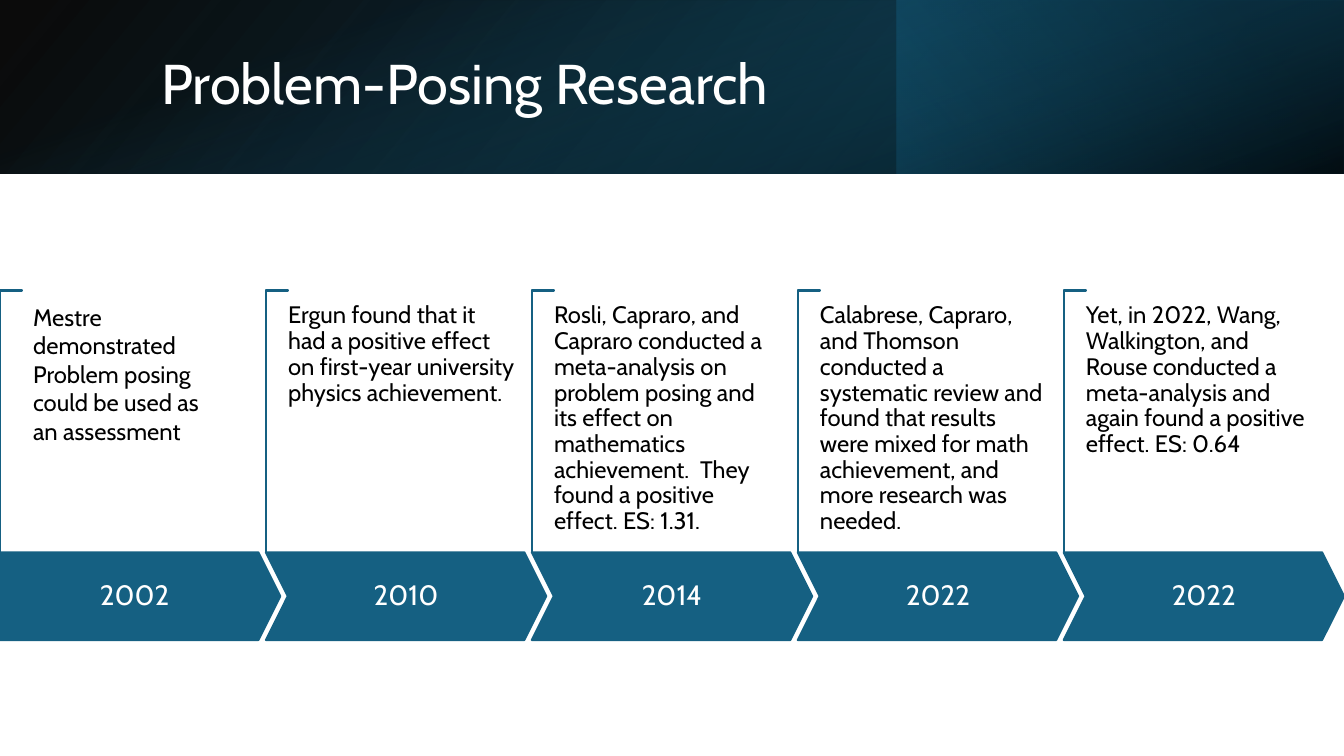
"""Build the Problem-Posing Research timeline slide."""
from lxml import etree
from pptx import Presentation
from pptx.dml.color import RGBColor
from pptx.enum.shapes import MSO_SHAPE as SHAPE
from pptx.enum.text import MSO_ANCHOR as ANCHOR, PP_ALIGN as ALIGN
from pptx.oxml.ns import qn
from pptx.util import Inches, Pt

BLUE = RGBColor(0x15, 0x60, 0x82)
MID_BLUE = RGBColor(0x10, 0x48, 0x62)
DARK_BLUE = RGBColor(0x0B, 0x30, 0x41)
BLACK = RGBColor(0, 0, 0)
WHITE = RGBColor(255, 255, 255)

TITLE = "Problem-Posing Research"
STUDIES = [
    ("2002", ["Mestre demonstrated", "Problem posing could be used as an assessment"]),
    ("2010", ["Ergun found that it had a positive effect on first-year university "
              "physics achievement."]),
    ("2014", ["Rosli, Capraro, and Capraro conducted a meta-analysis on problem posing "
              "and its effect on mathematics achievement.  They found a positive "
              "effect. ES: 1.31."]),
    ("2022", ["Calabrese, Capraro, and Thomson conducted a systematic review and found "
              "that results were mixed for math achievement, and more research was "
              "needed."]),
    ("2022", ["Yet, in 2022, Wang, Walkington, and Rouse conducted a meta-analysis and "
              "again found a positive effect. ES: 0.64"]),
]
BANDS = [
    dict(box=(0, 0, 13.33, 1.72), flip=True, angle=140,
         stops=[(0, BLACK, 96), (100, MID_BLUE, 100)]),
    dict(box=(8.89, 0, 4.44, 1.72), rotation=180, angle=320,
         stops=[(19, DARK_BLUE, 68), (100, BLUE, 79)]),
    dict(box=(5.8, -5.8, 1.72, 13.33), rotation=90, angle=340,
         stops=[(23, BLUE, 0), (99, BLACK, 74)]),
]
SLIDE_W, SLIDE_H = 13.33, 7.5
ARROW_W, ARROW_H, ARROW_TOP = 2.78, 0.87, 5.48
STEP = (SLIDE_W - ARROW_W) / (len(STUDIES) - 1)
BRACKET_W, BRACKET_H = 0.22, 2.6


def inches(box):
    """Convert a box in inches to lengths."""
    return [Inches(v) for v in box]


def write(tf, paragraphs, size=17, color=BLACK, align=ALIGN.LEFT, anchor=ANCHOR.TOP,
          spacing=0.9, after=0, insets=(0.1, 0.05)):
    """Fill a text frame with formatted paragraphs."""
    tf.word_wrap = True
    tf.vertical_anchor = anchor
    tf.margin_left = tf.margin_right = Inches(insets[0])
    tf.margin_top = tf.margin_bottom = Inches(insets[1])
    for i, text in enumerate(paragraphs):
        p = tf.add_paragraph() if i else tf.paragraphs[0]
        p.alignment, p.line_spacing, p.space_after = align, spacing, Pt(after)
        r = p.add_run()
        r.text = text
        r.font.name, r.font.size, r.font.color.rgb = "Cabin", Pt(size), color


def add_band(shapes, box, angle, stops, rotation=0, flip=False):
    """Add a borderless rectangle with a translucent gradient."""
    sp = shapes.add_shape(SHAPE.RECTANGLE, *inches(box))
    sp.shadow.inherit = False
    sp.rotation = rotation
    sp.line.fill.background()
    sp.fill.gradient()
    sp.fill.gradient_angle = 360 - angle
    for stop, (position, color, _) in zip(sp.fill.gradient_stops, stops):
        stop.position = position / 100
        stop.color.rgb = color
    colors = sp._element.spPr.iter(qn("a:srgbClr"))
    for clr, (_, _, opacity) in zip(list(colors), stops):
        etree.SubElement(clr, qn("a:alpha"), val=str(opacity * 1000))
    if flip:
        sp._element.spPr.find(qn("a:xfrm")).set("flipH", "1")


def add_outlined(shapes, kind, box, fill, adjustments, rotation=0):
    """Add a filled shape with a blue outline."""
    sp = shapes.add_shape(kind, *inches(box))
    sp.shadow.inherit = False
    sp.rotation = rotation
    for i, value in enumerate(adjustments):
        sp.adjustments[i] = value
    sp.fill.solid()
    sp.fill.fore_color.rgb = fill
    sp.line.color.rgb = BLUE
    sp.line.width = Pt(1.5)


def add_text(shapes, box, paragraphs, **fmt):
    """Add a text box."""
    write(shapes.add_textbox(*inches(box)).text_frame, paragraphs, **fmt)


def main():
    """Assemble and save the slide."""
    prs = Presentation()
    prs.slide_width, prs.slide_height = Inches(SLIDE_W), Inches(SLIDE_H)
    s = prs.slides.add_slide(prs.slide_layouts[5])
    for band in BANDS:
        add_band(s.shapes, **band)

    title = s.shapes.title
    title.left, title.top, title.width, title.height = inches((1.5, 0.38, 10.98, 0.96))
    write(title.text_frame, [TITLE], size=40, color=WHITE, anchor=ANCHOR.MIDDLE)
    s.shapes._spTree.append(title._element)

    timeline = s.shapes.add_group_shape().shapes
    for i, (year, finding) in enumerate(STUDIES):
        x = i * STEP
        first = i == 0
        bracket = (x + (BRACKET_W - BRACKET_H) / 2,
                   ARROW_TOP - (BRACKET_H + BRACKET_W) / 2, BRACKET_H, BRACKET_W)
        add_outlined(timeline, SHAPE.CORNER, bracket, WHITE, (0.01, 0.01), rotation=90)
        add_outlined(timeline, SHAPE.PENTAGON if first else SHAPE.CHEVRON,
                     (x, ARROW_TOP, ARROW_W, ARROW_H), BLUE, (0.25,))
        left, width = (0, 2.67) if first else (x + 0.22, 2.34)
        add_text(timeline, (left, ARROW_TOP, width, ARROW_H), [year], size=20,
                 color=WHITE, align=ALIGN.CENTER, anchor=ANCHOR.MIDDLE, after=7,
                 insets=(0.14, 0.28))
        if first:
            add_text(s.shapes, (0.23, 2.95, 2, 1.53), finding, spacing=1.0)
        else:
            add_text(timeline, (x + 0.22, 3.01, 2.25, 1.83), finding, after=6,
                     insets=(0, 0))

    prs.save("out.pptx")


if __name__ == "__main__":
    main()
